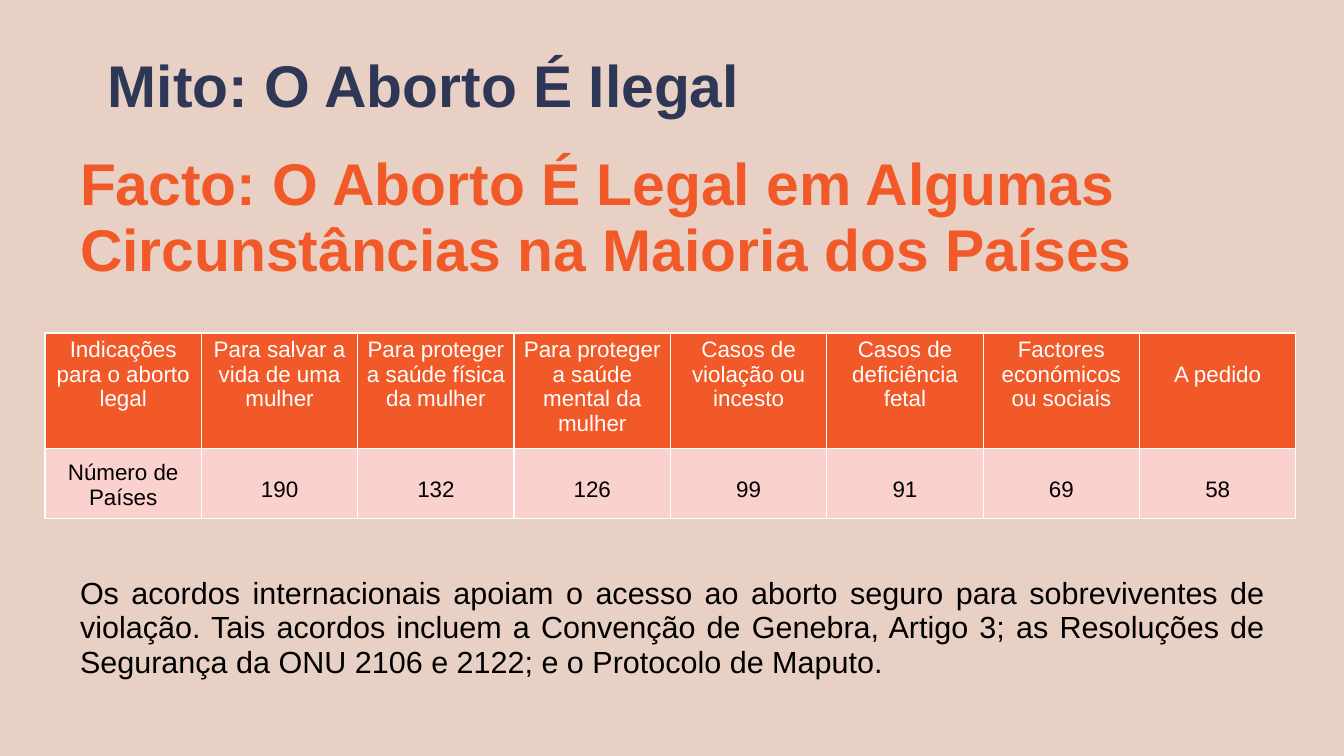
"""Build a slide on the legal status of abortion, with a table of countries."""
from dataclasses import dataclass

from lxml.etree import SubElement
from pptx import Presentation
from pptx.dml.color import RGBColor as Rgb
from pptx.enum.text import PP_ALIGN as Align
from pptx.oxml.ns import qn
from pptx.util import Emu, Pt


@dataclass(frozen=True)
class Theme:
    font: str = "Arial"
    back: str = "E8D1C4"
    navy: str = "2E3856"
    orange: str = "F15928"
    pink: str = "FAD1CD"
    white: str = "FFFFFF"
    black: str = "000000"
    head: float = 42
    body: float = 21.8
    cell: float = 16


@dataclass(frozen=True)
class Block:
    text: str
    left: int
    top: int
    width: int
    height: int
    size: float
    color: str
    bold: bool = False
    align: Align = Align.LEFT
    pitch: float = 1.0


@dataclass(frozen=True)
class Column:
    label: str
    value: str
    label_top: int = 4
    value_top: int = 29


THEME = Theme()
SCALE = 914400 / 100.8
INSET = 10
LEFT, TOP, WIDTH = 45, 333, 1251
ROWS = (109, 67)

BLOCKS = (
    Block("Mito: O Aborto É Ilegal", 98, 39, 1008, 106,
          THEME.head, THEME.navy, bold=True),
    Block("Facto: O Aborto É Legal em Algumas Circunstâncias na Maioria dos Países",
          70, 143, 1206, 150, THEME.head, THEME.orange, bold=True, pitch=0.93),
    Block("Os acordos internacionais apoiam o acesso ao aborto seguro para "
          "sobreviventes de violação. Tais acordos incluem a Convenção de Genebra, "
          "Artigo 3; as Resoluções de Segurança da ONU 2106 e 2122; e o Protocolo "
          "de Maputo.",
          70, 567, 1206, 130, THEME.body, THEME.black,
          align=Align.JUSTIFY, pitch=0.94),
)

COLUMNS = (
    Column("Indicações para o aborto legal", "Número de Países", value_top=12),
    Column("Para salvar a vida de uma mulher", "190"),
    Column("Para proteger a saúde física da mulher", "132"),
    Column("Para proteger a saúde mental da mulher", "126"),
    Column("Casos de violação ou incesto", "99"),
    Column("Casos de deficiência fetal", "91"),
    Column("Factores económicos ou sociais", "69"),
    Column("A pedido", "58", label_top=29),
)


def px(count: int) -> Emu:
    """Turn pixels into EMU."""
    return Emu(round(count * SCALE))


def style(para, size: float, color: str, align: Align, bold: bool = False) -> None:
    """Set the font and alignment of a paragraph."""
    para.alignment = align
    font = para.font
    font.name, font.size, font.bold = THEME.font, Pt(size), bold
    font.color.rgb = Rgb.from_string(color)


def draw_block(slide, block: Block) -> None:
    """Draw one block of running text."""
    box = slide.shapes.add_textbox(
        px(block.left), px(block.top), px(block.width), px(block.height))
    frame = box.text_frame
    frame.word_wrap = True
    frame.margin_left = frame.margin_right = px(INSET)
    frame.margin_top = frame.margin_bottom = px(INSET)
    frame.text = block.text
    para = frame.paragraphs[0]
    para.line_spacing = block.pitch
    style(para, block.size, block.color, block.align, block.bold)


def fill_cell(cell, text: str, top: int, color: str, fill: str) -> None:
    """Write one table cell with white borders and its own fill."""
    cell.text = text
    cell.margin_left = cell.margin_right = px(9)
    cell.margin_top, cell.margin_bottom = px(top), px(4)
    style(cell.text_frame.paragraphs[0], THEME.cell, color, Align.CENTER)
    props = cell._tc.get_or_add_tcPr()
    for side in ("L", "R", "T", "B"):
        line = SubElement(props, qn(f"a:ln{side}"), w=str(Pt(1)))
        solid = SubElement(line, qn("a:solidFill"))
        SubElement(solid, qn("a:srgbClr"), val=THEME.white)
    cell.fill.solid()
    cell.fill.fore_color.rgb = Rgb.from_string(fill)


def draw_table(slide) -> None:
    """Draw the table of legal grounds and country counts."""
    count = len(COLUMNS)
    table = slide.shapes.add_table(
        len(ROWS), count, px(LEFT), px(TOP), px(WIDTH), px(sum(ROWS))).table
    table.first_row = table.horz_banding = False
    for row, height in zip(table.rows, ROWS):
        row.height = px(height)
    for i, col in enumerate(COLUMNS):
        table.columns[i].width = px(WIDTH) // count
        fill_cell(table.cell(0, i), col.label, col.label_top,
                  THEME.white, THEME.orange)
        fill_cell(table.cell(1, i), col.value, col.value_top,
                  THEME.black, THEME.pink)


def main() -> None:
    """Build and save the slide."""
    deck = Presentation()
    deck.slide_width, deck.slide_height = px(1344), px(756)
    slide = deck.slides.add_slide(deck.slide_layouts[6])
    back = slide.background.fill
    back.solid()
    back.fore_color.rgb = Rgb.from_string(THEME.back)
    for block in BLOCKS:
        draw_block(slide, block)
    draw_table(slide)
    deck.save("out.pptx")


if __name__ == "__main__":
    main()
